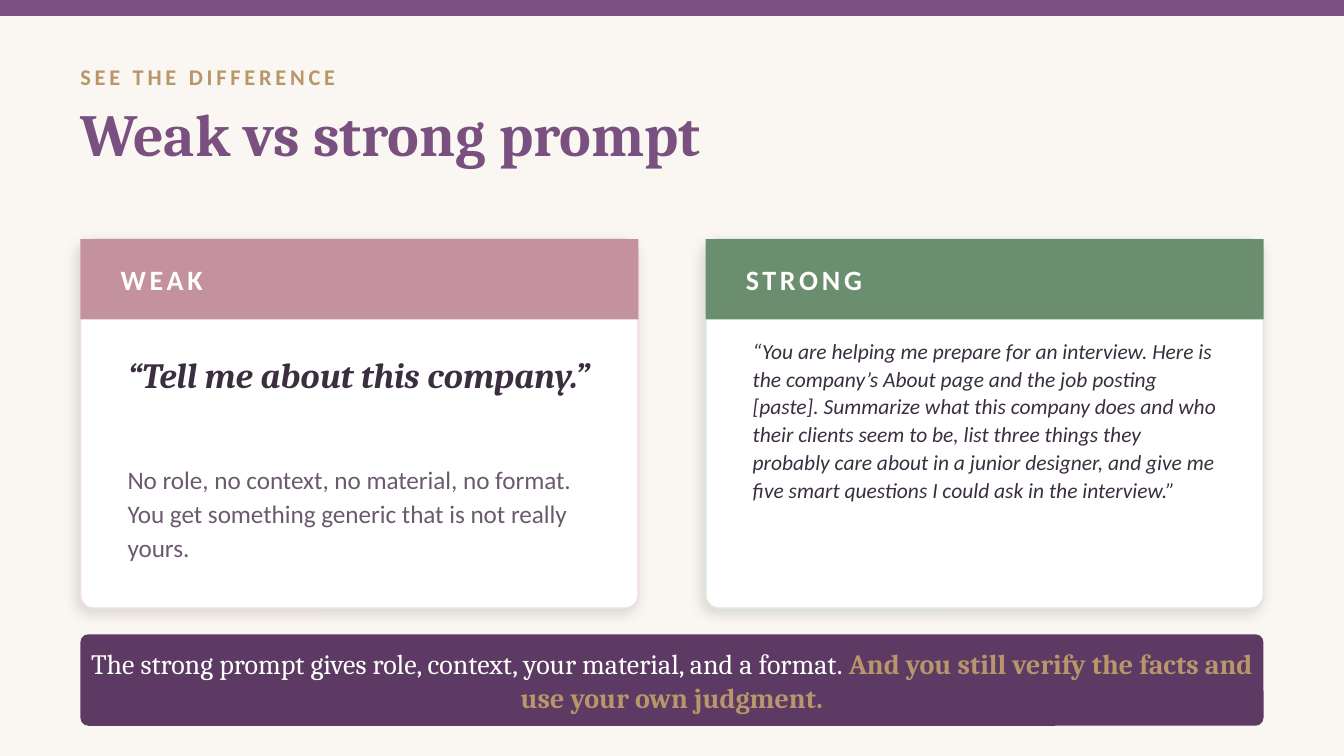
from lxml.etree import SubElement
from pptx import Presentation
from pptx.dml.color import RGBColor
from pptx.enum.shapes import MSO_SHAPE
from pptx.enum.text import MSO_ANCHOR, PP_ALIGN
from pptx.oxml.ns import qn
from pptx.util import Cm, Pt

COLORS = {
    "bg": "FAF7F2", "purple": "7A5080", "deep": "5C3A63", "gold": "B8956A",
    "white": "FFFFFF", "ink": "3A2E3F", "muted": "6B5A6E", "black": "000000",
    "rose": "C4929E", "rose_line": "F0DEE2", "green": "6B8F6E", "green_line": "DCEADE",
}
SANS, SERIF = "Calibri", "Cambria"

KICKER = "SEE THE DIFFERENCE"
TITLE = "Weak vs strong prompt"
CARDS = [
    {
        "label": "WEAK", "fill": "rose", "line": "rose_line",
        "texts": [
            {"text": "“Tell me about this company.”", "top": 6.68, "height": 1.78, "spacing": None,
             "style": dict(size=19, font=SERIF, color="ink", bold=True, italic=True)},
            {"text": "No role, no context, no material, no format. "
                     "You get something generic that is not really yours.",
             "top": 8.71, "height": 2.54, "spacing": 1.12,
             "style": dict(size=13.5, font=SANS, color="muted")},
        ],
    },
    {
        "label": "STRONG", "fill": "green", "line": "green_line",
        "texts": [
            {"text": "“You are helping me prepare for an interview. Here is the company’s About page "
                     "and the job posting [paste]. Summarize what this company does and who their "
                     "clients seem to be, list three things they probably care about in a junior "
                     "designer, and give me five smart questions I could ask in the interview.”",
             "top": 6.35, "height": 4.95, "spacing": 1.08,
             "style": dict(size=11.5, font=SANS, color="ink", italic=True)},
        ],
    },
]
TAKEAWAY = [
    ("The strong prompt gives role, context, your material, and a format. ",
     dict(size=15, font=SERIF, color="white")),
    ("And you still verify the facts and use your own judgment.",
     dict(size=15, font=SERIF, color="gold", bold=True)),
]

SLIDE_W, SLIDE_H = 25.4, 14.29
MARGIN = 1.52
CONTENT_W = SLIDE_W - 2 * MARGIN
GAP = 1.27
CARD_W = (CONTENT_W - GAP) / 2
CARD_TOP, CARD_H, HEADER_H = 4.52, 6.98, 1.52
LABEL_PAD, TEXT_PAD = 0.76, 0.89
BAR_TOP, BAR_H = 11.99, 1.73


def rgb(name):
    return RGBColor.from_string(COLORS[name])


def add_box(s, kind, left, top, width, height, fill, line=None, radius=None):
    sp = s.shapes.add_shape(kind, Cm(left), Cm(top), Cm(width), Cm(height))
    sp.shadow.inherit = False
    sp.fill.solid()
    sp.fill.fore_color.rgb = rgb(fill)
    if line:
        sp.line.color.rgb = rgb(line)
        sp.line.width = Pt(1)
    else:
        sp.line.fill.background()
    if radius is not None:
        sp.adjustments[0] = radius
    return sp


def add_shadow(sp):
    effects = sp._element.spPr.find(qn("a:effectLst"))
    shadow = SubElement(effects, qn("a:outerShdw"), blurRad=str(Pt(7)), dist=str(Pt(3)),
                        dir=str(135 * 60000), algn="bl", rotWithShape="0")
    color = SubElement(shadow, qn("a:srgbClr"), val=COLORS["black"])
    SubElement(color, qn("a:alpha"), val="13000")


def add_text(s, left, top, width, height, runs, anchor=MSO_ANCHOR.TOP, align=None, spacing=None):
    tf = s.shapes.add_textbox(Cm(left), Cm(top), Cm(width), Cm(height)).text_frame
    tf.word_wrap = True
    tf.vertical_anchor = anchor
    tf.margin_left = tf.margin_top = tf.margin_right = tf.margin_bottom = 0
    p = tf.paragraphs[0]
    p.alignment = align
    p.line_spacing = spacing
    for text, style in runs:
        r = p.add_run()
        r.text = text
        r.font.size = Pt(style["size"])
        r.font.name = style["font"]
        r.font.color.rgb = rgb(style["color"])
        r.font.bold = style.get("bold")
        r.font.italic = style.get("italic")
        if "tracking" in style:
            r.font._element.set("spc", str(style["tracking"] * 100))


def add_card(s, left, card):
    body = add_box(s, MSO_SHAPE.ROUNDED_RECTANGLE, left, CARD_TOP, CARD_W, CARD_H,
                   "white", card["line"], 0.036)
    add_shadow(body)
    add_box(s, MSO_SHAPE.RECTANGLE, left, CARD_TOP, CARD_W, HEADER_H, card["fill"])
    label_style = dict(size=15, font=SANS, color="white", bold=True, tracking=2)
    add_text(s, left + LABEL_PAD, CARD_TOP, 9.27, HEADER_H,
             [(card["label"], label_style)], MSO_ANCHOR.MIDDLE)
    for item in card["texts"]:
        add_text(s, left + TEXT_PAD, item["top"], CARD_W - 2 * TEXT_PAD, item["height"],
                 [(item["text"], item["style"])], spacing=item["spacing"])


def main():
    prs = Presentation()
    prs.slide_width, prs.slide_height = Cm(SLIDE_W), Cm(SLIDE_H)
    s = prs.slides.add_slide(prs.slide_layouts[6])
    s.background.fill.solid()
    s.background.fill.fore_color.rgb = rgb("bg")

    add_box(s, MSO_SHAPE.RECTANGLE, 0, 0, SLIDE_W, 0.3, "purple")
    kicker_style = dict(size=12, font=SANS, color="gold", bold=True, tracking=2)
    add_text(s, MARGIN, 1.07, CONTENT_W, 0.76, [(KICKER, kicker_style)], MSO_ANCHOR.MIDDLE)
    title_style = dict(size=32, font=SERIF, color="purple", bold=True)
    add_text(s, MARGIN, 1.83, CONTENT_W, 2.41, [(TITLE, title_style)])

    for i, card in enumerate(CARDS):
        add_card(s, MARGIN + i * (CARD_W + GAP), card)

    add_box(s, MSO_SHAPE.ROUNDED_RECTANGLE, MARGIN, BAR_TOP, CONTENT_W, BAR_H, "deep", radius=0.088)
    add_text(s, MARGIN, BAR_TOP, CONTENT_W, BAR_H, TAKEAWAY, MSO_ANCHOR.MIDDLE, PP_ALIGN.CENTER)
    prs.save("out.pptx")


if __name__ == "__main__":
    main()
